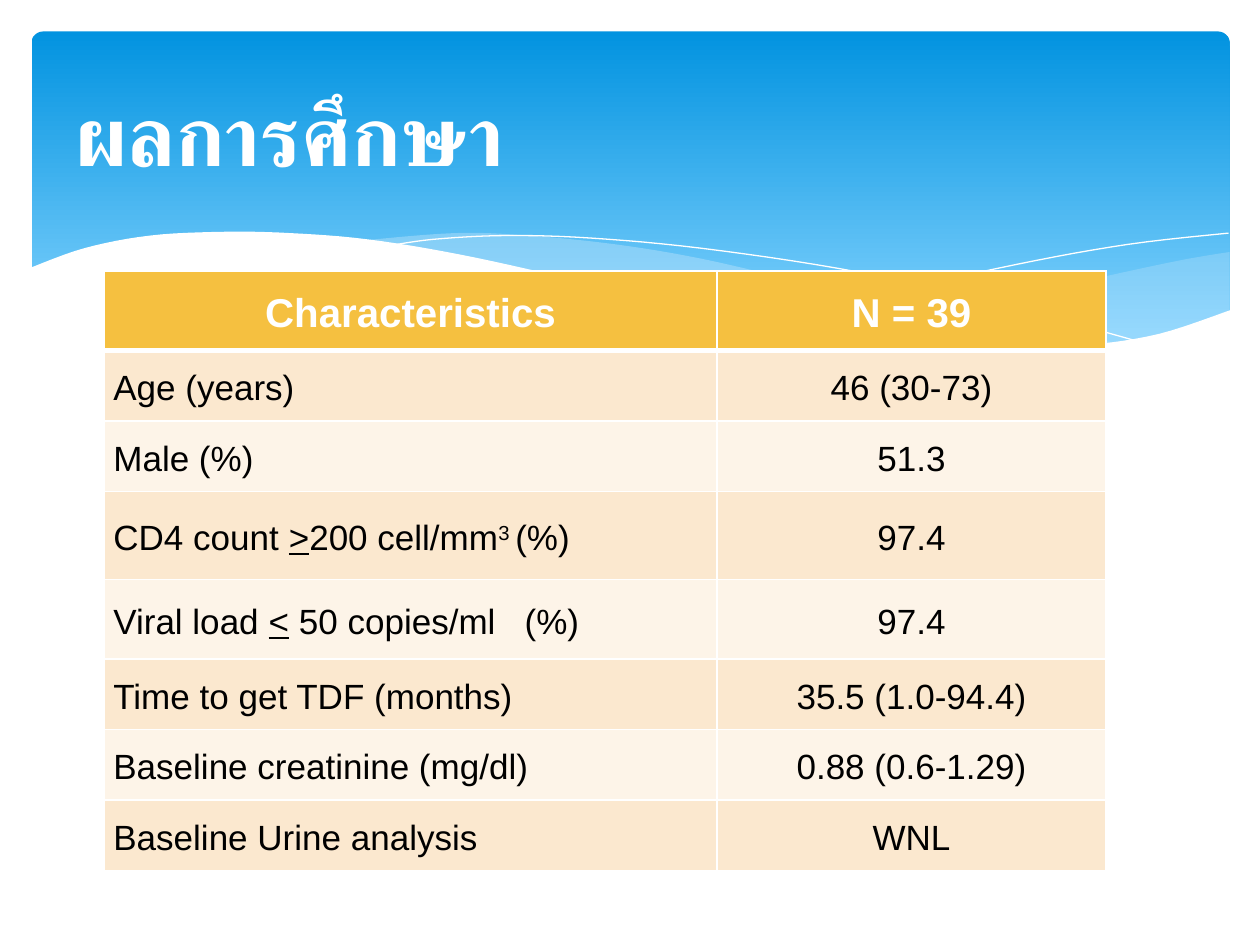
import pptx
import pptx.util
import pptx.dml.color
import pptx.enum.shapes
import pptx.enum.text
import pptx.oxml
import pptx.oxml.ns
from pptx.util import Inches

COLORS = {
    "sky_top": "0293E0", "sky_bottom": "83D3FE", "mist": "C6E7FC", "white": "FFFFFF",
    "header": "F5C040", "band_dark": "FBE8CF", "band_light": "FDF4E8", "text": "000000",
}
ALIGN = pptx.enum.text.PP_ALIGN
MIDDLE = pptx.enum.text.MSO_ANCHOR.MIDDLE
DRAWING = pptx.oxml.ns.nsdecls("a")

RIGHT_WAVE = [
    [(9.51, 1.75), (9.1, 1.82), (8.36, 1.98), (7.28, 2.23), (6.36, 2.4)],
    [(6.36, 2.4), (6.94, 2.47), (7.44, 2.52), (7.89, 2.53), (8.47, 2.49), (8.96, 2.4),
     (9.51, 2.22)],
]
MIDDLE_WAVE = [
    [(8.68, 2.48), (7.82, 2.35), (6.81, 2.15), (6.04, 1.97), (5.3, 1.8), (4.64, 1.69),
     (3.95, 1.62), (3.36, 1.6), (2.61, 1.66)],
    [(2.61, 1.66), (3.37, 1.78), (4.24, 1.97), (5.41, 2.23), (6.25, 2.39), (6.97, 2.49),
     (7.71, 2.53), (8.23, 2.52), (8.68, 2.48)],
]
FALLING_LINE = [
    [(2.84, 1.7), (3.19, 1.65), (3.76, 1.62), (4.44, 1.64), (5.31, 1.72), (6.4, 1.88),
     (7.35, 2.08), (8.06, 2.26), (8.82, 2.47)],
]
RISING_LINE = [[(5.88, 2.32), (6.7, 2.1), (7.81, 1.85), (8.7, 1.69), (9.5, 1.6)]]
WHITE_WAVE = [
    [(9.52, 2.21), (8.95, 2.4), (8.38, 2.49), (7.84, 2.52), (7.01, 2.47), (6.01, 2.33),
     (5.04, 2.14), (4.22, 1.95), (3.4, 1.77), (2.67, 1.65), (2.05, 1.6), (1.52, 1.59),
     (0.94, 1.62), (0.42, 1.72), (-0.02, 1.88)],
    [(-0.02, 3.04), (9.52, 3.04)],
]

COLUMN_WIDTHS = [4.86, 3.09]
ROW_HEIGHTS = [0.63, 0.56, 0.56, 0.7, 0.63, 0.56, 0.56, 0.56]
UNDERLINE = {"underline": True}
ROWS = [
    ([("Characteristics", {})], "N = 39"),
    ([("Age (years)", {})], "46 (30-73)"),
    ([("Male (%)", {})], "51.3"),
    ([("CD4 count ", {}), (">", UNDERLINE), ("200 cell/mm", {}),
      ("3 ", {"baseline": 30}), ("(%)", {})], "97.4"),
    ([("Viral load ", {}), ("<", UNDERLINE), (" 50 copies/ml   (%)", {})], "97.4"),
    ([("Time to get TDF (months)", {})], "35.5 (1.0-94.4)"),
    ([("Baseline creatinine (mg/dl)", {})], "0.88 (0.6-1.29)"),
    ([("Baseline Urine analysis", {})], "WNL"),
]


def rgb(name):
    """Return the named colour as an RGBColor."""
    return pptx.dml.color.RGBColor.from_string(COLORS[name])


def apply_format(target, values):
    """Set every attribute in values on the target."""
    for name, value in values.items():
        setattr(target, name, value)


def add_span(para, text, color, font, size, bold, underline=False, baseline=0):
    """Add a run of formatted text to a paragraph."""
    span = para.add_run()
    span.text = text
    apply_format(span.font, {"name": font, "size": pptx.util.Pt(size), "bold": bold,
                             "underline": underline})
    span.font.color.rgb = rgb(color)
    if baseline:
        span.font._element.set("baseline", str(baseline * 1000))


def smooth(knots, steps=6):
    """Return points on a Catmull-Rom curve through the knots."""
    if len(knots) < 3:
        return knots
    padded = [knots[0], *knots, knots[-1]]
    points = []
    for a, b, c, d in zip(padded, padded[1:], padded[2:], padded[3:]):
        for step in range(steps):
            t = step / steps
            points.append(tuple(
                q + t / 2 * (r - p + t * (2 * p - 5 * q + 4 * r - s
                                          + t * (3 * (q - r) + s - p)))
                for p, q, r, s in zip(a, b, c, d)))
    return points + [knots[-1]]


def add_wave(slide, left, top, edges, color, opacity=100, closed=True):
    """Draw smooth edges as one filled wave or as one hairline."""
    points = [(Inches(left + x), Inches(top + y)) for edge in edges for x, y in smooth(edge)]
    builder = slide.shapes.build_freeform(*points[0])
    builder.add_line_segments(points[1:], close=closed)
    wave = builder.convert_to_shape()
    wave.shadow.inherit = False
    if not closed:
        wave.fill.background()
        wave.line.color.rgb = rgb(color)
        wave.line.width = 0
        return
    wave.line.fill.background()
    wave.fill.solid()
    wave.fill.fore_color.rgb = rgb(color)
    if opacity < 100:
        shade = wave._element.spPr.find(".//" + pptx.oxml.ns.qn("a:srgbClr"))
        shade.append(pptx.oxml.parse_xml(f'<a:alpha {DRAWING} val="{opacity * 1000}"/>'))


def add_banner(slide, left, top, width, height):
    """Draw the blue gradient banner with its waves."""
    box = slide.shapes.add_shape(pptx.enum.shapes.MSO_SHAPE.ROUNDED_RECTANGLE,
                                 *map(Inches, (left, top, width, height)))
    box.adjustments[0] = 0.034
    box.shadow.inherit = False
    box.line.fill.background()
    box.fill.gradient()
    box.fill.gradient_angle = 270
    stops = [(0, "sky_top"), (0.9, "sky_bottom")]
    for stop, (position, color) in zip(box.fill.gradient_stops, stops):
        stop.position = position
        stop.color.rgb = rgb(color)
    add_wave(slide, left, top, RIGHT_WAVE, "mist", 29)
    add_wave(slide, left, top, MIDDLE_WAVE, "mist", 40)
    add_wave(slide, left, top, FALLING_LINE, "white", closed=False)
    add_wave(slide, left, top, RISING_LINE, "white", closed=False)
    add_wave(slide, left, top, WHITE_WAVE, "white")


def add_borders(cell, widths):
    """Give a cell white borders with widths in points by side."""
    for index, (side, width) in enumerate(widths.items()):
        border = pptx.oxml.parse_xml(
            f'<a:ln{side} {DRAWING} w="{pptx.util.Pt(width)}"><a:solidFill>'
            f'<a:srgbClr val="{COLORS["white"]}"/></a:solidFill></a:ln{side}>')
        cell._tc.get_or_add_tcPr().insert(index, border)


def fill_cell(cell, spans, row, column):
    """Write and format one table cell."""
    header = row == 0
    apply_format(cell, {"vertical_anchor": MIDDLE,
                        "margin_left": Inches(0.07), "margin_right": Inches(0.07),
                        "margin_top": Inches(0.04), "margin_bottom": Inches(0.04)})
    cell.fill.solid()
    cell.fill.fore_color.rgb = rgb(
        "header" if header else "band_dark" if row % 2 else "band_light")
    add_borders(cell, {"L": 1, "R": 1, "T": 3 if row == 1 else 1, "B": 3 if header else 1})
    para = cell.text_frame.paragraphs[0]
    centred = header or column == 1
    apply_format(para, {"line_spacing": 1.15,
                        "alignment": ALIGN.CENTER if centred else ALIGN.LEFT})
    for text, extra in spans:
        add_span(para, text, "white" if header else "text", "Arial",
                 23 if header else 20, header, **extra)


def add_characteristics(slide, left, top, width, height):
    """Place the table of patient characteristics."""
    table = slide.shapes.add_table(len(ROWS), len(COLUMN_WIDTHS),
                                   *map(Inches, (left, top, width, height))).table
    for column, size in zip(table.columns, COLUMN_WIDTHS):
        column.width = Inches(size)
    for row, size in zip(table.rows, ROW_HEIGHTS):
        row.height = Inches(size)
    for row, (label, value) in enumerate(ROWS):
        for column, spans in enumerate((label, [(value, {})])):
            fill_cell(table.cell(row, column), spans, row, column)


def add_title(slide, left, top, width, height):
    """Place the slide title."""
    box = slide.shapes.add_textbox(*map(Inches, (left, top, width, height)))
    apply_format(box.text_frame, {"word_wrap": True, "vertical_anchor": MIDDLE})
    add_span(box.text_frame.paragraphs[0], "ผลการศึกษา", "white", "Lato", 48, True)


def main():
    """Build the slide and save the deck."""
    deck = pptx.Presentation()
    apply_format(deck, {"slide_width": Inches(10), "slide_height": Inches(7.5)})
    slide = deck.slides.add_slide(deck.slide_layouts[6])
    add_banner(slide, 0.25, 0.25, 9.51, 2.7)
    add_characteristics(slide, 0.83, 2.15, 7.95, 4.75)
    add_title(slide, 0.5, 0.37, 9, 1.37)
    deck.save("out.pptx")


if __name__ == "__main__":
    main()
